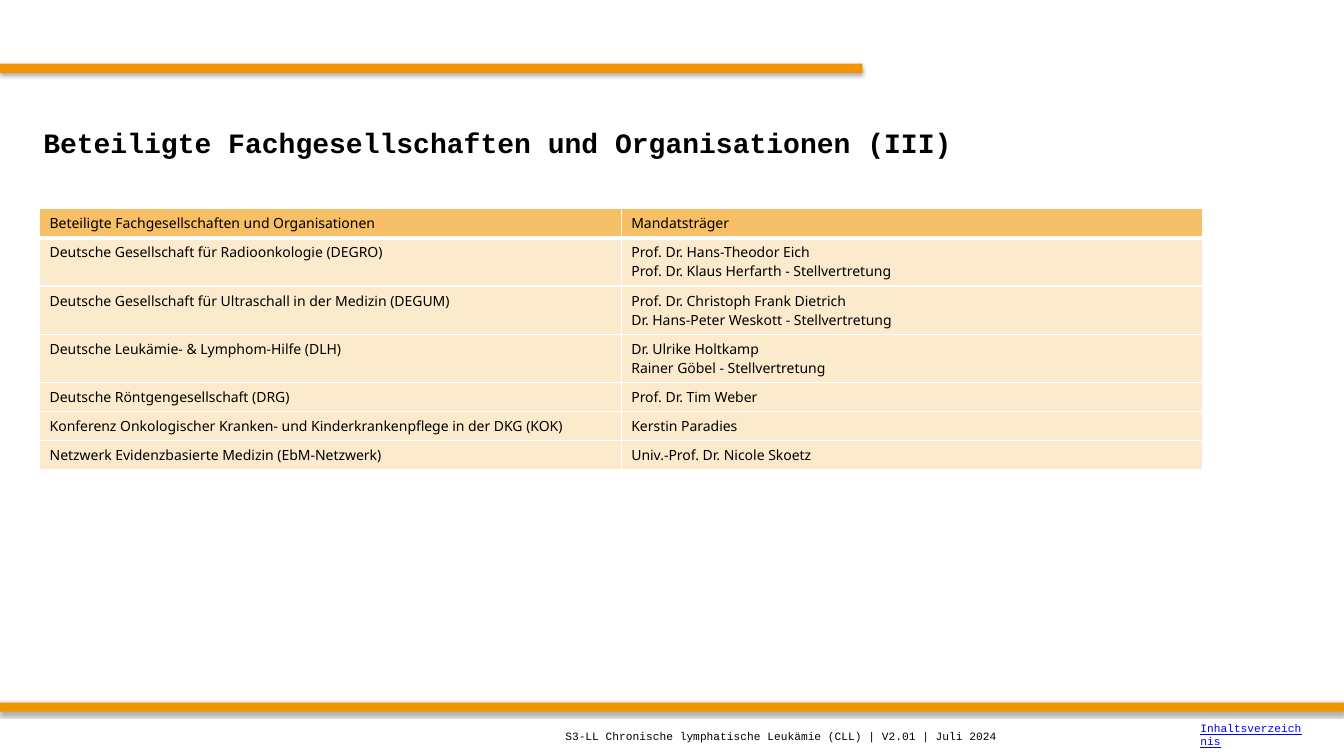
"""Build the slide listing the participating societies and their delegates."""
from lxml.etree import SubElement
from pptx import Presentation
from pptx.dml.color import RGBColor
from pptx.enum.shapes import MSO_SHAPE as Shape
from pptx.enum.text import MSO_ANCHOR as Anchor
from pptx.oxml.ns import qn
from pptx.util import Pt


def color(value):
    return RGBColor.from_string(value)


def style(paragraph, size, name, value="000000"):
    paragraph.font.size = Pt(size)
    paragraph.font.name = name
    paragraph.font.color.rgb = color(value)


presentation = Presentation()
presentation.slide_width, presentation.slide_height = Pt(960), Pt(540)
slide = presentation.slides.add_slide(presentation.slide_layouts[6])

for top, width in [(45.4, 616), (501.8, 960)]:
    bar = slide.shapes.add_shape(Shape.RECTANGLE, Pt(0), Pt(top), Pt(width), Pt(6.6))
    bar.fill.solid()
    bar.fill.fore_color.rgb = color("F29400")
    bar.line.fill.background()
    bar.shadow.inherit = False
    effects = bar.element.spPr.find(qn("a:effectLst"))
    shadow = SubElement(effects, qn("a:outerShdw"), blurRad=str(Pt(3.1)),
                        dist=str(Pt(1.8)), dir="5400000", rotWithShape="0")
    shade = SubElement(shadow, qn("a:srgbClr"), val="000000")
    SubElement(shade, qn("a:alpha"), val="35000")

labels = [
    ("Beteiligte Fachgesellschaften und Organisationen (III)",
     (23.8, 59.8, 912, 84.2), 20, "000000", True, None),
    ("S3-LL Chronische lymphatische Leukämie (CLL) | V2.01 | Juli 2024",
     (396.7, 511.9, 396.7, 28.1), 8, "000000", None, None),
    ("Inhaltsverzeichnis", (850.3, 510.5, 87.8, 28.1), 8, "0000FF", None, True),
]
for text, place, size, ink, bold, underline in labels:
    frame = slide.shapes.add_textbox(*map(Pt, place)).text_frame
    frame.word_wrap = True
    frame.vertical_anchor = Anchor.MIDDLE
    frame.text = text
    paragraph = frame.paragraphs[0]
    style(paragraph, size, "Courier New", ink)
    paragraph.font.bold = bold
    paragraph.font.underline = underline

societies = [
    ("Beteiligte Fachgesellschaften und Organisationen", "Mandatsträger"),
    ("Deutsche Gesellschaft für Radioonkologie (DEGRO)",
     "Prof. Dr. Hans-Theodor Eich\vProf. Dr. Klaus Herfarth - Stellvertretung"),
    ("Deutsche Gesellschaft für Ultraschall in der Medizin (DEGUM)",
     "Prof. Dr. Christoph Frank Dietrich\vDr. Hans-Peter Weskott - Stellvertretung"),
    ("Deutsche Leukämie- & Lymphom-Hilfe (DLH)",
     "Dr. Ulrike Holtkamp\vRainer Göbel - Stellvertretung"),
    ("Deutsche Röntgengesellschaft (DRG)", "Prof. Dr. Tim Weber"),
    ("Konferenz Onkologischer Kranken- und Kinderkrankenpflege in der DKG (KOK)",
     "Kerstin Paradies"),
    ("Netzwerk Evidenzbasierte Medizin (EbM-Netzwerk)", "Univ.-Prof. Dr. Nicole Skoetz"),
]
table = slide.shapes.add_table(len(societies), 2, Pt(28.3), Pt(149.2),
                               Pt(831), Pt(170.6)).table
for row_index, texts in enumerate(societies):
    table.rows[row_index].height = Pt(34.4 if "\v" in texts[1] else 20.8)
    for column_index, text in enumerate(texts):
        cell = table.cell(row_index, column_index)
        cell.text = text
        paragraph = cell.text_frame.paragraphs[0]
        paragraph.space_after = Pt(5)
        style(paragraph, 10, "Noto Sans")
        properties = cell._tc.get_or_add_tcPr()
        for side in "LRTB":
            below_header = (row_index, side) in [(0, "B"), (1, "T")]
            border = SubElement(properties, qn(f"a:ln{side}"),
                                w=str(Pt(3 if below_header else 1)))
            SubElement(SubElement(border, qn("a:solidFill")), qn("a:srgbClr"), val="FFFFFF")
        cell.fill.solid()
        cell.fill.fore_color.rgb = color("FCEACC" if row_index else "F7BF66")

presentation.save("out.pptx")
